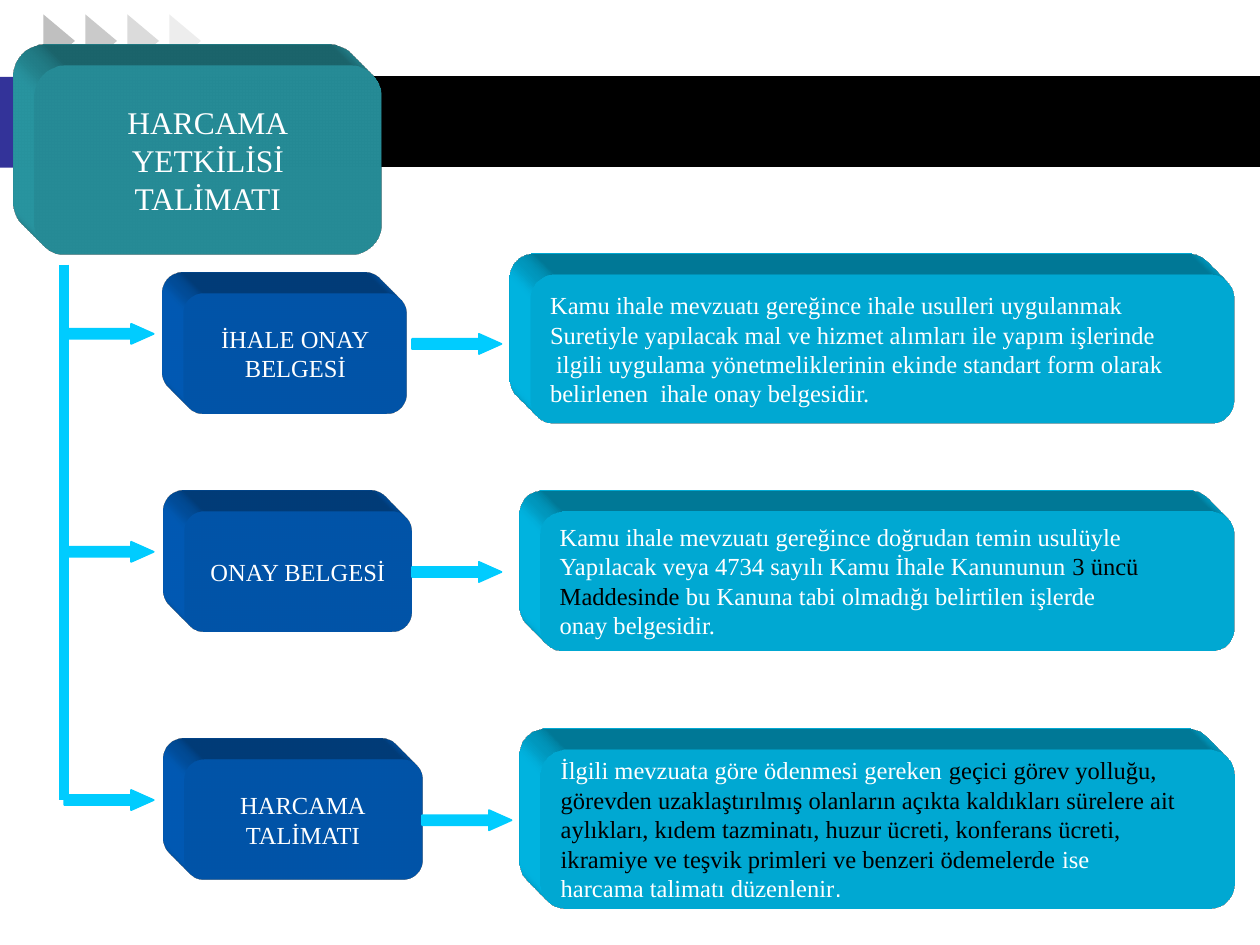
from lxml import etree
from pptx import Presentation
from pptx.dml.color import RGBColor
from pptx.enum.shapes import MSO_CONNECTOR, MSO_SHAPE
from pptx.enum.text import MSO_ANCHOR, PP_ALIGN
from pptx.oxml import parse_xml
from pptx.oxml.ns import qn
from pptx.util import Inches, Pt

RECTANGLE = MSO_SHAPE.RECTANGLE
ROUNDED = MSO_SHAPE.ROUNDED_RECTANGLE
TRIANGLE = MSO_SHAPE.ISOSCELES_TRIANGLE
RIGHT_ARROW = MSO_SHAPE.RIGHT_ARROW
CENTER, JUSTIFY = PP_ALIGN.CENTER, PP_ALIGN.JUSTIFY

COLORS = {"white": "FFFFFF", "black": "000000", "violet": "333399", "gray": "C0C0C0",
          "teal": "2EA9B6", "blue": "0066CC", "cyan": "00CCFF"}
FONT = "Times New Roman"
A_NS = "http://schemas.openxmlformats.org/drawingml/2006/main"

# A line is a list of (text, color) spans; a third value is a different font.
ROOT = {"at": (0.27, 0.52, 2.76, 1.5), "lines": ["HARCAMA", "YETKİLİSİ", "TALİMATI"]}
ROWS = [
    {"label": ["İHALE ONAY", "BELGESİ"], "label_at": (1.46, 2.33, 1.77, 0.95),
     "branch_y": 2.57, "arrow": (3.27, 2.65), "detail_at": (4.21, 2.18, 5.59, 1.18),
     "detail": [
         [("Kamu ihale mevzuatı gereğince ihale usulleri uygulanmak ", "white")],
         [("Suretiyle yapılacak mal ve hizmet alımları ile yapım işlerinde", "white")],
         [(" ilgili uygulama yönetmeliklerinin ekinde standart form olarak ", "white")],
         [("belirlenen  ihale onay belgesidir. ", "white")]]},
    {"label": ["ONAY BELGESİ"], "label_at": (1.46, 4.06, 1.81, 0.95),
     "branch_y": 4.3, "arrow": (3.27, 4.46), "detail_at": (4.29, 4.06, 5.51, 1.1),
     "detail": [
         [("Kamu ihale mevzuatı gereğince doğrudan temin usulüyle ", "white")],
         [("Yapılacak veya 4734 sayılı Kamu İhale Kanununun ", "white"),
          ("3 üncü ", "black")],
         [("Maddesinde", "black"),
          (" bu Kanuna tabi olmadığı belirtilen işlerde ", "white")],
         [("onay belgesidir.", "white")]]},
    {"label": ["HARCAMA", "TALİMATI"], "label_at": (1.46, 6.03, 1.89, 0.95),
     "branch_y": 6.27, "arrow": (3.35, 6.43), "detail_at": (4.29, 5.95, 5.51, 1.26),
     "detail": [
         [("İlgili mevzuata göre ödenmesi gereken", "white"),
          (" geçici görev yolluğu,", "black")],
         [("görevden uzaklaştırılmış olanların açıkta kaldıkları sürelere ait", "black")],
         [("aylıkları, kıdem tazminatı, huzur ücreti, konferans ücreti,", "black")],
         [("ikramiye ve teşvik primleri ve benzeri ödemelerde ", "black"), ("ise", "white")],
         [("harcama talimatı düzenlenir", "white"), (".", "white", "Arial")]]},
]
SPINE_X, SPINE_TOP, SPINE_BOTTOM = 0.51, 2.1, 6.35
ARROW_SIZE = (0.71, 0.16)
TRIANGLE_ALPHAS = [100, 84, 56, 27]


def rgb(name):
    return RGBColor.from_string(COLORS[name])


def add_box(page, kind, at, color, outline=None):
    box = page.shapes.add_shape(kind, *map(Inches, at))
    box.shadow.inherit = False
    box.fill.solid()
    box.fill.fore_color.rgb = rgb(color)
    if outline:
        box.line.color.rgb = rgb(color)
        box.line.width = Pt(outline)
    else:
        box.line.fill.background()
    return box


def extrude(box, color):
    """Give the box a solid depth towards the top left."""
    properties = box._element.spPr
    properties.append(parse_xml(
        f'<a:scene3d xmlns:a="{A_NS}"><a:camera prst="legacyObliqueTopLeft"/>'
        '<a:lightRig rig="legacyFlat3" dir="b"/></a:scene3d>'))
    properties.append(parse_xml(
        f'<a:sp3d xmlns:a="{A_NS}" extrusionH="430200" prstMaterial="legacyMatte">'
        '<a:bevelT w="13500" h="13500" prst="angle"/>'
        '<a:bevelB w="13500" h="13500" prst="angle"/>'
        f'<a:extrusionClr><a:srgbClr val="{COLORS[color]}"/></a:extrusionClr></a:sp3d>'))


def add_block(page, at, color, lines, size, align):
    box = add_box(page, ROUNDED, at, color)
    extrude(box, color)
    frame = box.text_frame
    frame.word_wrap = False
    frame.vertical_anchor = MSO_ANCHOR.MIDDLE
    for index, line in enumerate(lines):
        para = frame.paragraphs[0] if index == 0 else frame.add_paragraph()
        para.alignment = align
        for text, text_color, *other_font in line:
            span = para.add_run()
            span.text = text
            span.font.color.rgb = rgb(text_color)
            formats = {"size": Pt(size), "name": other_font[0] if other_font else FONT}
            for name, value in formats.items():
                setattr(span.font, name, value)


def add_arrow(page, left, top):
    arrow = add_box(page, RIGHT_ARROW, (left, top, *ARROW_SIZE), "cyan", 1)
    arrow.adjustments[1] = 1.12


def white_lines(texts):
    return [[(text, "white")] for text in texts]


def add_header(page):
    add_box(page, RECTANGLE, (1.58, 0.61, 8.42, 0.71), "black", 0.75)
    add_box(page, RECTANGLE, (0, 0.61, 1.58, 0.72), "violet")
    for index, alpha in enumerate(TRIANGLE_ALPHAS):
        mark = add_box(page, TRIANGLE, (0.26 + index / 3, 0.2, 0.42, 0.25), "gray")
        mark.rotation = 90
        fill_color = mark._element.spPr.find(qn("a:solidFill"))[0]
        etree.SubElement(fill_color, qn("a:alpha"), val=str(alpha * 1000))


def add_spine(page):
    ends = (SPINE_X, SPINE_TOP, SPINE_X, SPINE_BOTTOM)
    spine = page.shapes.add_connector(MSO_CONNECTOR.STRAIGHT, *map(Inches, ends))
    spine.line.color.rgb = rgb("cyan")
    spine.line.width = Pt(6)
    etree.SubElement(spine._element.spPr, qn("a:effectLst"))


def main():
    deck = Presentation()
    deck.slide_width, deck.slide_height = Inches(10), Inches(7.5)
    page = deck.slides.add_slide(deck.slide_layouts[6])
    add_header(page)
    add_block(page, ROOT["at"], "teal", white_lines(ROOT["lines"]), 18, CENTER)
    add_spine(page)
    for row in ROWS:
        add_block(page, row["label_at"], "blue", white_lines(row["label"]), 14, CENTER)
        add_arrow(page, SPINE_X, row["branch_y"])
        add_block(page, row["detail_at"], "cyan", row["detail"], 14, JUSTIFY)
        add_arrow(page, *row["arrow"])
    deck.save("out.pptx")


if __name__ == "__main__":
    main()
